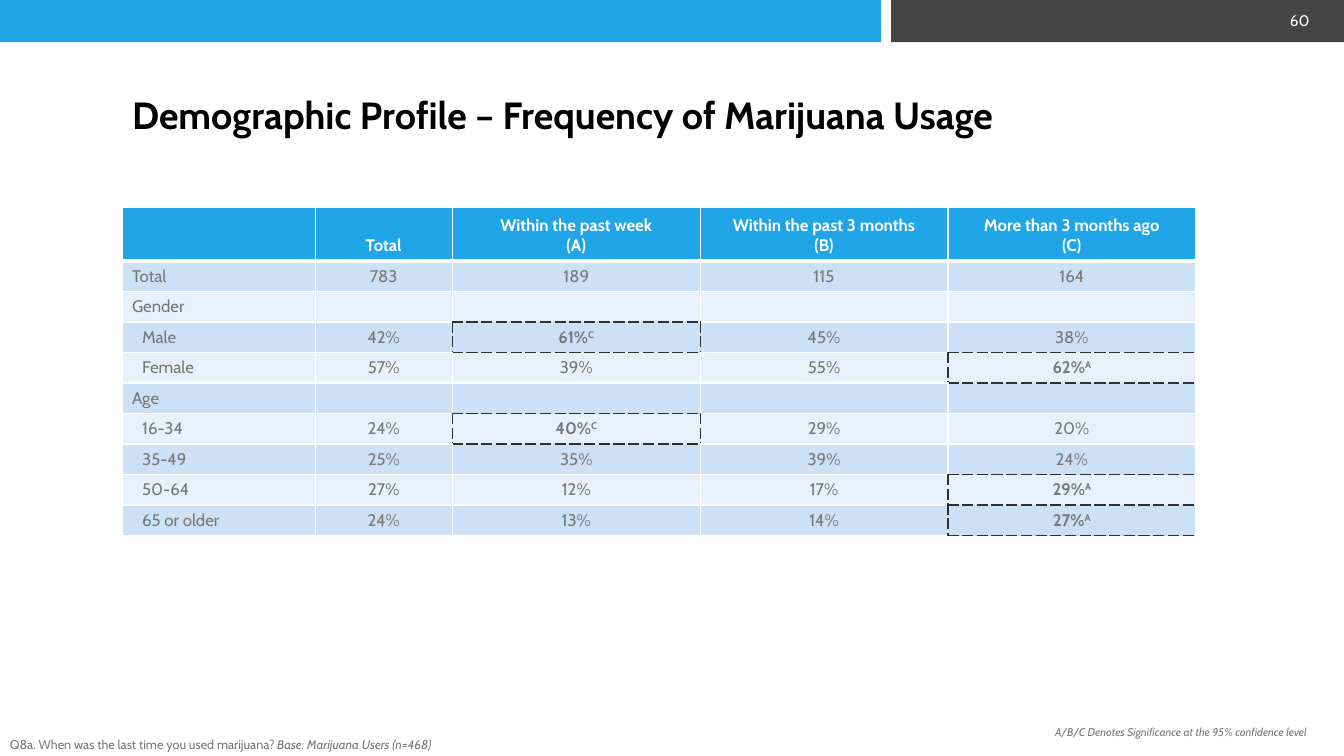
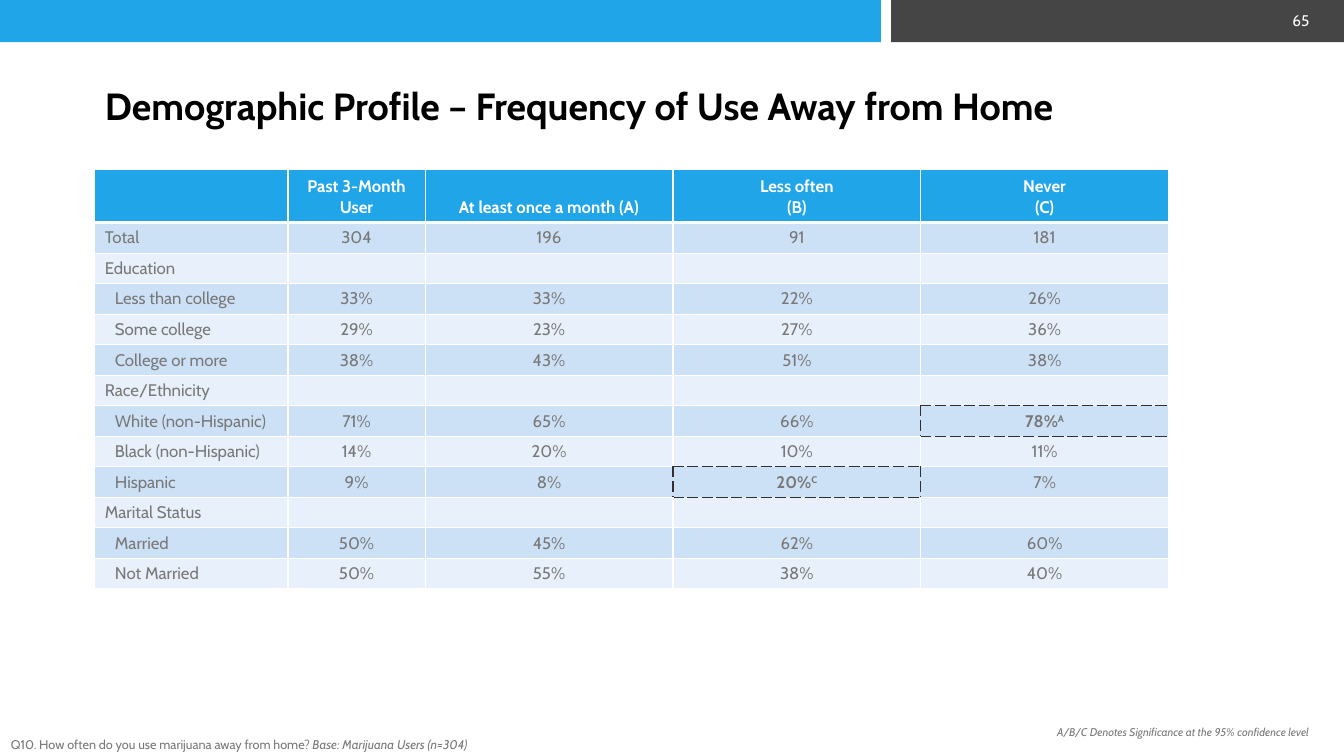
import pptx
import pptx.dml.color
import pptx.enum.shapes
import pptx.enum.text
import pptx.oxml.ns
import pptx.util
from lxml import etree

Pt = pptx.util.Pt
ALIGN = pptx.enum.text.PP_ALIGN
ANCHOR = pptx.enum.text.MSO_ANCHOR

# Content: a row with a label only opens a group; "^" sets off a significance mark
SIGNIFICANCE = "A/B/C Denotes Significance at the 95% confidence level"
PROFILES = [
    {
        "title": "Demographic Profile – Frequency of Marijuana Usage",
        "number": "60",
        "title_at": (87.1, 58.3),
        "table_at": (87.1, 148.4),
        "question_left": 0,
        "significance_left": 746.6,
        "question": "Q8a. When was the last time you used marijuana? ",
        "base": "Base: Marijuana Users (n=468)",
        "rows": [
            ("", "Total", "Within the past week\n(A)",
             "Within the past 3 months\n(B)", "More than 3 months ago\n(C)"),
            ("Total", "783", "189", "115", "164"),
            ("Gender",),
            ("Male", "42%", "61%^C", "45%", "38%"),
            ("Female", "57%", "39%", "55%", "62%^A"),
            ("Age",),
            ("16-34", "24%", "40%^C", "29%", "20%"),
            ("35-49", "25%", "35%", "39%", "24%"),
            ("50-64", "27%", "12%", "17%", "29%^A"),
            ("65 or older", "24%", "13%", "14%", "27%^A"),
        ],
    },
    {
        "title": "Demographic Profile – Frequency of Use Away from Home",
        "number": "65",
        "title_at": (67.7, 51.8),
        "table_at": (67.7, 121),
        "question_left": 0.7,
        "significance_left": 748.1,
        "question": "Q10. How often do you use marijuana away from home? ",
        "base": "Base: Marijuana Users (n=304)",
        "rows": [
            ("", "Past 3-Month User", "At least once a month (A)",
             "Less often\n(B)", "Never\n(C)"),
            ("Total", "304", "196", "91", "181"),
            ("Education",),
            ("Less than college", "33%", "33%", "22%", "26%"),
            ("Some college", "29%", "23%", "27%", "36%"),
            ("College or more", "38%", "43%", "51%", "38%"),
            ("Race/Ethnicity",),
            ("White (non-Hispanic)", "71%", "65%", "66%", "78%^A"),
            ("Black (non-Hispanic)", "14%", "20%", "10%", "11%"),
            ("Hispanic", "9%", "8%", "20%^C", "7%"),
            ("Marital Status",),
            ("Married", "50%", "45%", "62%", "60%"),
            ("Not Married", "50%", "55%", "38%", "40%"),
        ],
    },
]

# Shared look
COLORS = {"blue": "20A5E8", "charcoal": "454545", "white": "FFFFFF", "black": "000000",
          "gray": "787878", "odd": "CDE1F6", "even": "E8F0FB", "mark": "303030"}
STYLES = {
    "title": {"size": Pt(27), "bold": True, "color": "black"},
    "number": {"size": Pt(11), "color": "white"},
    "header": {"size": Pt(12), "bold": True, "color": "white"},
    "body": {"size": Pt(12), "bold": False, "color": "gray"},
    "marked": {"size": Pt(12), "bold": True, "color": "gray"},
    "question": {"size": Pt(9), "color": "gray"},
    "base": {"size": Pt(9), "italic": True, "color": "gray"},
    "significance": {"size": Pt(8), "italic": True, "color": "gray"},
}
FONT = "Cabin"
SLIDE_SIZE = (960, 540)
BANDS = [("charcoal", 636.6, 323.4), ("blue", 0, 629.3)]
BAND_HEIGHT = 30.2
COLUMN_WIDTHS = [138, 98, 177, 177, 177]
HEADER_HEIGHT, ROW_HEIGHT = 38, 21.8
GROUP_INDENT = 14.4
# Edge tag -> step (row, column) to the neighbouring cell, in schema order
EDGES = {"lnL": (0, -1), "lnR": (0, 1), "lnT": (-1, 0), "lnB": (1, 0)}


def rgb(name):
    return pptx.dml.color.RGBColor.from_string(COLORS[name])


def points(*lengths):
    return [Pt(length) for length in lengths]


def paint(shape_or_cell, color):
    shape_or_cell.fill.solid()
    shape_or_cell.fill.fore_color.rgb = rgb(color)


def add_run(paragraph, text, style):
    run = paragraph.add_run()
    run.text = text
    run.font.name = FONT
    for attribute, value in STYLES[style].items():
        if attribute == "color":
            run.font.color.rgb = rgb(value)
        else:
            setattr(run.font, attribute, value)
    return run


def add_text(slide, box, runs, align=ALIGN.LEFT, anchor=ANCHOR.TOP):
    frame = slide.shapes.add_textbox(*points(*box)).text_frame
    frame.word_wrap = True
    frame.vertical_anchor = anchor
    frame.paragraphs[0].alignment = align
    for text, style in runs:
        add_run(frame.paragraphs[0], text, style)


def add_bands(slide):
    """Draw the top bands and move them to the layout, which every slide shares."""
    for color, left, width in BANDS:
        band = slide.shapes.add_shape(pptx.enum.shapes.MSO_SHAPE.RECTANGLE,
                                      *points(left, 0, width, BAND_HEIGHT))
        band.shadow.inherit = False
        band.line.fill.background()
        paint(band, color)
        slide.slide_layout.shapes.element.append(band.element)


def add_title(slide, text, position):
    title = slide.shapes.title
    title.left, title.top, title.width, title.height = points(*position, 911.5, 46.8)
    frame = title.text_frame
    frame.auto_size = pptx.enum.text.MSO_AUTO_SIZE.NONE
    frame.vertical_anchor = ANCHOR.MIDDLE
    frame.paragraphs[0].alignment = ALIGN.LEFT
    add_run(frame.paragraphs[0], text, "title")


def set_border(cell, position, tag, color, width, dash):
    qn = pptx.oxml.ns.qn
    line = etree.Element(qn("a:" + tag), w=str(Pt(width)))
    fill = etree.SubElement(line, qn("a:solidFill"))
    etree.SubElement(fill, qn("a:srgbClr"), val=COLORS[color])
    etree.SubElement(line, qn("a:prstDash"), val=dash)
    cell._tc.get_or_add_tcPr().insert(position, line)


def fill_cell(cell, text, style, align):
    value, _, mark = text.partition("^")
    cell.text_frame.text = "\n" * value.count("\n")
    for paragraph, line in zip(cell.text_frame.paragraphs, value.split("\n")):
        paragraph.alignment = align
        if line:
            add_run(paragraph, line, "marked" if mark else style)
        else:
            # An empty cell keeps the row as low as its neighbours
            etree.SubElement(paragraph._p, pptx.oxml.ns.qn("a:endParaRPr"),
                             sz=str(int(STYLES[style]["size"].pt * 100)))
    if mark:
        superscript = add_run(paragraph, mark, "marked")
        superscript._r.get_or_add_rPr().set("baseline", "30000")


def add_profile_table(slide, rows, position):
    last_column = len(COLUMN_WIDTHS) - 1
    height = HEADER_HEIGHT + ROW_HEIGHT * (len(rows) - 1)
    table = slide.shapes.add_table(len(rows), len(COLUMN_WIDTHS),
                                   *points(*position, sum(COLUMN_WIDTHS), height)).table
    for column, width in zip(table.columns, COLUMN_WIDTHS):
        column.width = Pt(width)
    marked = {(r, c) for r, row in enumerate(rows)
              for c, text in enumerate(row) if "^" in text}

    in_group = False
    for r, row in enumerate(rows):
        table.rows[r].height = Pt(ROW_HEIGHT if r else HEADER_HEIGHT)
        is_group = len(row) == 1
        in_group = in_group or is_group
        for c in range(len(COLUMN_WIDTHS)):
            cell = table.cell(r, c)
            fill_cell(cell, row[c] if c < len(row) else "", "body" if r else "header",
                      ALIGN.CENTER if c else ALIGN.LEFT)
            cell.vertical_anchor = ANCHOR.MIDDLE if r else ANCHOR.BOTTOM
            if c == 0 and in_group and not is_group:
                cell.margin_left = Pt(GROUP_INDENT)
            paint(cell, ("odd" if r % 2 else "even") if r else "blue")

            # Dashes surround marked cells, open at the table's right side
            for place, (tag, (down, across)) in enumerate(EDGES.items()):
                dashed = ({(r, c), (r + down, c + across)} & marked
                          and (tag, c) != ("lnR", last_column))
                below_header = (r, tag) in {(0, "lnB"), (1, "lnT")}
                set_border(cell, place, tag, "mark" if dashed else "white",
                           3 if below_header else 1, "dash" if dashed else "solid")


def main():
    deck = pptx.Presentation()
    deck.slide_width, deck.slide_height = points(*SLIDE_SIZE)
    title_only = deck.slide_layouts[5]
    for index, profile in enumerate(PROFILES):
        slide = deck.slides.add_slide(title_only)
        if index == 0:
            add_bands(slide)
        add_title(slide, profile["title"], profile["title_at"])
        add_text(slide, (899.3, 2.9, 43.2, 23.8), [(profile["number"], "number")],
                 ALIGN.RIGHT, ANCHOR.MIDDLE)
        add_profile_table(slide, profile["rows"], profile["table_at"])
        # Footnotes
        add_text(slide, (profile["question_left"], 522.7, 587.5, 18),
                 [(profile["question"], "question"), (profile["base"], "base")])
        left = profile["significance_left"]
        add_text(slide, (left, 514.8, SLIDE_SIZE[0] - left, 17.3),
                 [(SIGNIFICANCE, "significance")])
    deck.save("out.pptx")


if __name__ == "__main__":
    main()
